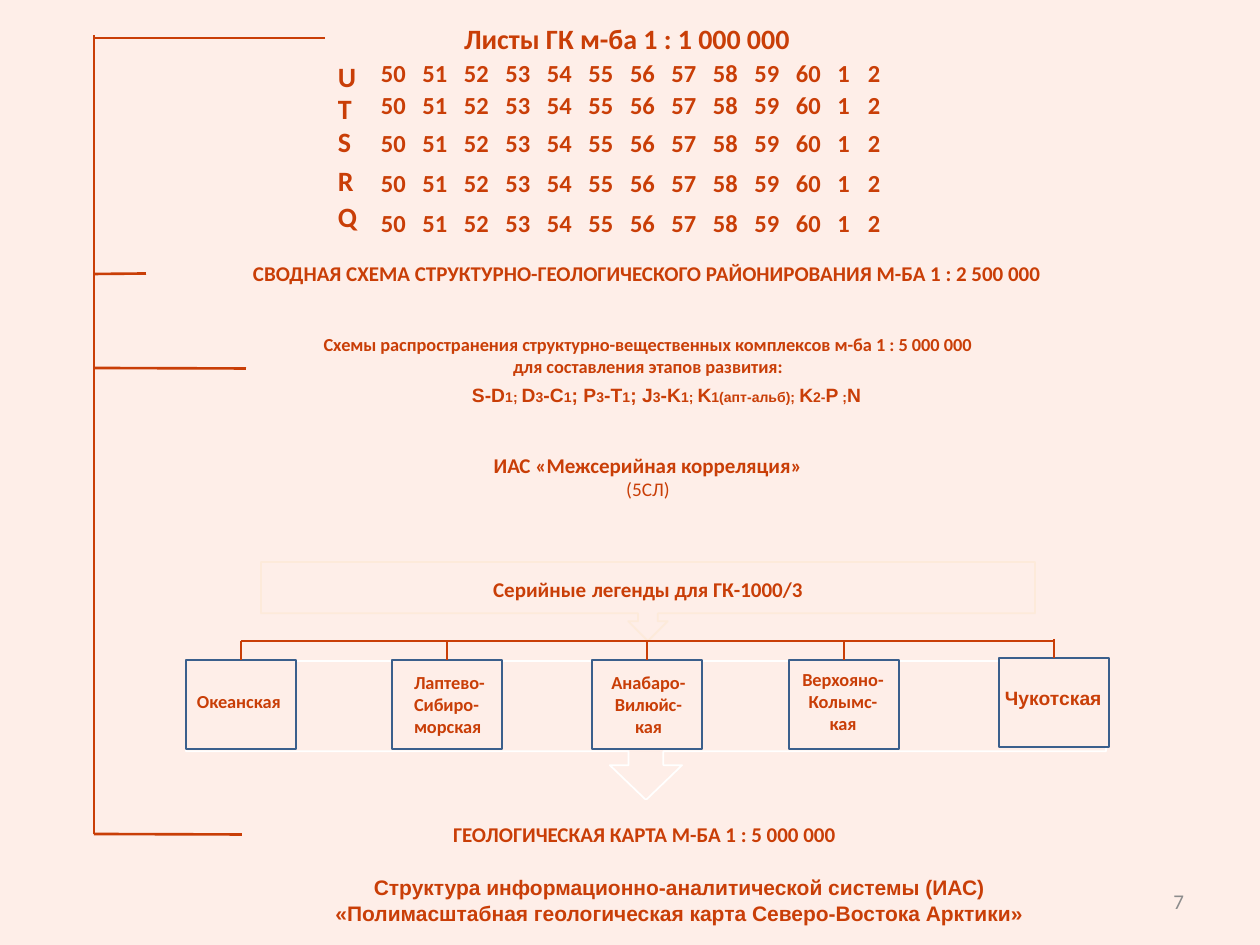
from lxml.etree import SubElement
from pptx import Presentation
from pptx.dml.color import RGBColor
from pptx.enum.shapes import MSO_CONNECTOR, MSO_SHAPE
from pptx.enum.text import MSO_ANCHOR, MSO_AUTO_SIZE, PP_ALIGN
from pptx.oxml.ns import qn
from pptx.util import Emu, Pt

PAPER, RUST, NAVY, GREY = "FEEEE8", "C93E07", "3A5F8C", "8C8C8C"
LEFT, CENTER, RIGHT = PP_ALIGN.LEFT, PP_ALIGN.CENTER, PP_ALIGN.RIGHT
TOP, MIDDLE = MSO_ANCHOR.TOP, MSO_ANCHOR.MIDDLE


def px(value):
    return Emu(round(value * 914400 / 126))


def rgb(value):
    return RGBColor.from_string(value)


class SchemeSlide:
    """Style of the scheme and the slide it is drawn on."""

    def __init__(self, slide):
        self.slide = slide
        slide.background.fill.solid()
        slide.background.fill.fore_color.rgb = rgb(PAPER)

    def set_text(self, shape, paragraphs, size=12, font="Calibri", color=RUST, bold=True,
                 align=CENTER, anchor=MIDDLE, wrap=True, bottom=6, tabs=()):
        """Each paragraph is a string or a list of (text, size[, bold]) runs."""
        frame = shape.text_frame
        frame.auto_size = MSO_AUTO_SIZE.NONE
        frame.word_wrap = wrap
        frame.vertical_anchor = anchor
        frame.margin_left = frame.margin_right = px(13)
        frame.margin_top, frame.margin_bottom = px(6), px(bottom)
        for index, runs in enumerate(paragraphs):
            paragraph = frame.add_paragraph() if index else frame.paragraphs[0]
            paragraph.alignment = align
            if tabs:
                stops = SubElement(paragraph._p.get_or_add_pPr(), qn("a:tabLst"))
                for stop in tabs:
                    SubElement(stops, qn("a:tab"), pos=str(px(stop)), algn="l")
            if isinstance(runs, str):
                runs = [(runs, size)]
            for text, run_size, *weight in runs:
                run = paragraph.add_run()
                run.text = text
                run.font.name = font
                run.font.size = Pt(run_size)
                run.font.bold = weight[0] if weight else bold
                run.font.color.rgb = rgb(color)

    def title(self, box, paragraphs, **style):
        title = self.slide.shapes.title
        title.left, title.top, title.width, title.height = map(px, box)
        self.set_text(title, paragraphs, **style)

    def block(self, box, paragraphs=(), kind=MSO_SHAPE.RECTANGLE, line=None,
              adjust=(), **style):
        shape = self.slide.shapes.add_shape(kind, *map(px, box))
        shape.shadow.inherit = False
        shape.fill.solid()
        shape.fill.fore_color.rgb = rgb(PAPER)
        if line:
            shape.line.color.rgb = rgb(line)
            shape.line.width = Pt(1)
        else:
            shape.line.fill.background()
        for index, value in enumerate(adjust):
            shape.adjustments[index] = value
        self.set_text(shape, paragraphs, **style)
        return shape

    def label(self, box, paragraphs, **style):
        self.set_text(self.slide.shapes.add_textbox(*map(px, box)), paragraphs, **style)

    def line(self, x1, y1, x2, y2, target=None, side=0):
        line = self.slide.shapes.add_connector(
            MSO_CONNECTOR.STRAIGHT, *map(px, (x1, y1, x2, y2)))
        line.line.color.rgb = rgb(RUST)
        line.line.width = Pt(1.5)
        SubElement(line._element.spPr, qn("a:effectLst"))
        if target is not None:
            line.end_connect(target, side)


def main():
    deck = Presentation()
    deck.slide_width, deck.slide_height = px(1260), px(945)
    scheme = SchemeSlide(deck.slides.add_slide(deck.slide_layouts[5]))

    # Frame behind the series legends
    scheme.block((186, 661, 920, 139), kind=MSO_SHAPE.DOWN_ARROW_CALLOUT,
                 line="FFFFFF", adjust=(0.25, 0.26, 0.25, 0.65))

    # Levels of the system
    sheets = scheme.block((325, 16, 604, 44), ["Листы ГК м-ба 1 : 1 000 000"], size=16)
    zoning = scheme.block((146, 244, 1002, 59), [
        "СВОДНАЯ СХЕМА СТРУКТУРНО-ГЕОЛОГИЧЕСКОГО РАЙОНИРОВАНИЯ М-БА 1 : 2 500 000"])
    complexes = scheme.block((246, 324, 804, 89), [
        "Схемы распространения структурно-вещественных комплексов м-ба 1 : 5 000 000",
        "для составления этапов развития:"], size=10.5, bottom=32)
    scheme.block((261, 442, 774, 69), [
        "ИАС «Межсерийная корреляция»", [("(5СЛ)", 11, False)]])
    geological_map = scheme.block((242, 800, 805, 69),
                                  ["ГЕОЛОГИЧЕСКАЯ КАРТА М-БА 1 : 5 000 000"])
    scheme.block((261, 562, 774, 79),
                 [[("Серийные", 12), (" ", 14), ("легенды для ГК-1000/3", 12)]],
                 kind=MSO_SHAPE.DOWN_ARROW_CALLOUT, line="FDEADA")
    scheme.block((630, 512, 33, 49), kind=MSO_SHAPE.UP_ARROW)

    # Series legends hanging from a common bar
    bar_y, box_width, box_height = 641, 110, 89
    all_series = [
        (186, 660, (184, 684, 122, 35), ["Океанская"], {"align": LEFT}),
        (392, 660, (401, 665, 108, 79), ["Лаптево-", "Сибиро-", "морская"],
         {"align": LEFT}),
        (592, 660, (593, 665, 111, 79), ["Анабаро-", "Вилюйс-", "кая"], {}),
        (789, 660, (782, 662, 122, 79), ["Верхояно-", "Колымс-", "кая"], {}),
        (999, 658, (992, 680, 123, 35), ["Чукотская"],
         {"align": LEFT, "size": 11, "font": "Arial"}),
    ]
    scheme.line(241, bar_y, 1054, bar_y)
    for left, top, text_box, name, style in all_series:
        series = scheme.block((left, top, box_width, box_height), line=NAVY)
        middle = left + box_width / 2
        scheme.line(middle, top - 19, middle, top, series)
        scheme.label(text_box, name, **{"size": 10.5, "anchor": TOP, "wrap": False, **style})

    # Trunk with a branch to each level
    trunk_x = 94
    scheme.line(trunk_x, 35, trunk_x, 834)
    for level, left, y in ((sheets, 325, 38), (zoning, 146, 274),
                           (complexes, 246, 368), (geological_map, 242, 834)):
        scheme.line(trunk_x, y, left, y, level, 1)

    # Map sheets: row letters, then sheet numbers
    sheet_numbers = "\t".join(map(str, [*range(50, 61), 1, 2]))
    stops = [41.5 * column for column in range(1, 12)] + [487]
    rows = (("U", 57, 52), ("T", 89, 84), ("S", 122, 122), ("R", 161, 162), ("Q", 197, 202))
    for letter, letter_top, _ in rows:
        scheme.block((325, letter_top, 604, 39), [letter], size=16, align=LEFT)
    for _, _, numbers_top in rows:
        scheme.label((368, numbers_top, 576, 43), [sheet_numbers], size=14,
                     align=LEFT, anchor=TOP, tabs=stops)

    # Stages of development, indices in small type
    stages = [("S-D", "1; "), ("D", "3"), ("-C", "1"), ("; P", "3"), ("-T", "1"),
              ("; J", "3"), ("-K", "1; "), ("K", "1(апт-альб); "), ("K", "2-"),
              ("P", " ;")]
    stage_runs = [run for age, index in stages for run in ((age, 11), (index, 8))]
    scheme.label((459, 377, 418, 35), [stage_runs + [("N", 11)]],
                 font="Arial", align=LEFT, anchor=TOP, wrap=False)

    # Title and page number
    scheme.title((311, 869, 737, 64), [
        "Структура информационно-аналитической системы (ИАС)",
        "«Полимасштабная геологическая карта Северо-Востока Арктики»"],
        font="Arial", anchor=TOP, wrap=False)
    scheme.label((903, 876, 294, 50), ["7"], color=GREY, bold=False, align=RIGHT)

    deck.save("out.pptx")


if __name__ == "__main__":
    main()
